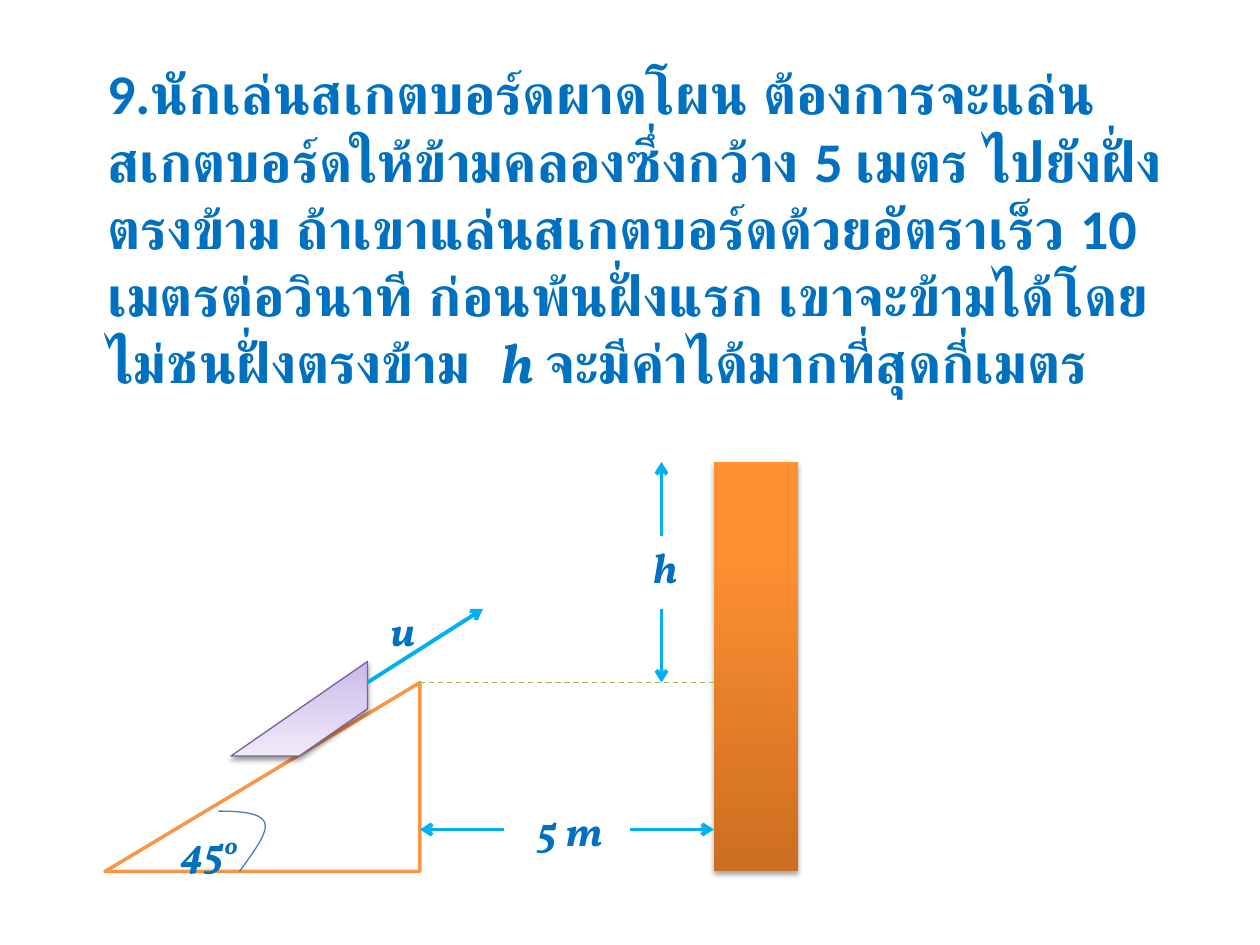
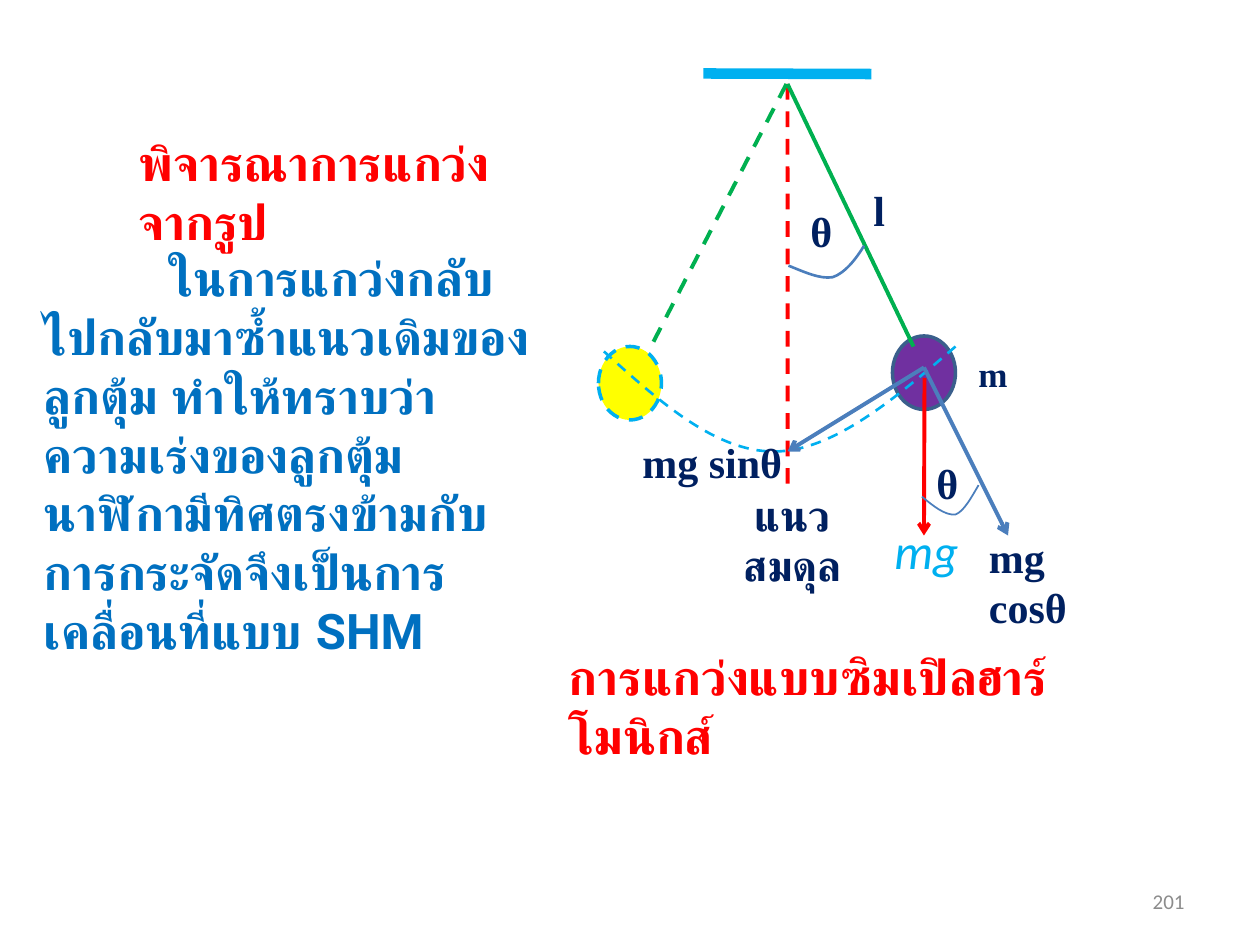
from lxml import etree
from pptx import Presentation
from pptx.dml.color import RGBColor
from pptx.enum.dml import MSO_LINE
from pptx.enum.shapes import MSO_CONNECTOR, MSO_SHAPE as SHAPE
from pptx.enum.text import MSO_ANCHOR as ANCHOR, MSO_AUTO_SIZE, PP_ALIGN as ALIGN
from pptx.oxml.ns import qn
from pptx.util import Emu, Inches, Pt

# Grid: 120 columns by 90 rows of a twelfth of an inch
CELL = Inches(1) / 12
COLUMNS, ROWS = 120, 90

WHITE = RGBColor(0xFF, 0xFF, 0xFF)
BLUE = RGBColor(0x00, 0x70, 0xC0)
SKY = RGBColor(0x00, 0xB0, 0xF0)
STEEL = RGBColor(0x4B, 0x7E, 0xBC)
BOB_EDGE = RGBColor(0x3A, 0x5F, 0x8C)
NAVY = RGBColor(0x00, 0x20, 0x60)
RED = RGBColor(0xFF, 0x00, 0x00)
GREEN = RGBColor(0x00, 0xB0, 0x50)
OLIVE = RGBColor(0x98, 0xB9, 0x55)
YELLOW = RGBColor(0xFF, 0xFF, 0x00)
PURPLE = RGBColor(0x70, 0x30, 0xA0)
VIOLET = RGBColor(0x7D, 0x60, 0xA0)
ORANGE = RGBColor(0xF7, 0x96, 0x46)
GREY = RGBColor(0x8C, 0x8C, 0x8C)
WALL_SHADES = [(0, RGBColor(0xCC, 0x6E, 0x20)), (80, RGBColor(0xFF, 0x90, 0x34)),
               (100, RGBColor(0xFF, 0x91, 0x36))]
BOARD_SHADES = [(0, RGBColor(0xC9, 0xB5, 0xE8)), (35, RGBColor(0xD8, 0xCB, 0xEE)),
                (100, RGBColor(0xF0, 0xEA, 0xF9))]

BODY, SYMBOL, FORMULA = "Calibri", "Vollkorn", "Times New Roman"


def cells(*values):
    return [Emu(round(value * CELL)) for value in values]


def add_tag(parent, tag, **attributes):
    element = etree.SubElement(parent, qn(tag))
    for key, value in attributes.items():
        element.set(key, str(value))
    return element


# Text
def add_run(paragraph, text, size, color, font=BODY, bold=True, italic=False, **extra):
    run = paragraph.add_run()
    run.text = text
    run.font.size, run.font.name = Pt(size), font
    run.font.bold, run.font.italic = bold, italic
    run.font.color.rgb = color
    for key, value in extra.items():
        run.font._element.set(key, str(value))


def prepare_frame(frame, wrap=True, align=ALIGN.LEFT, anchor=ANCHOR.TOP):
    frame.word_wrap = wrap
    frame.auto_size = MSO_AUTO_SIZE.NONE
    frame.vertical_anchor = anchor
    paragraph = frame.paragraphs[0]
    paragraph.alignment = align
    return paragraph


def add_text(slide, box, text, size, color, wrap=True, align=ALIGN.LEFT,
             anchor=ANCHOR.TOP, **style):
    frame = slide.shapes.add_textbox(*cells(*box)).text_frame
    paragraph = prepare_frame(frame, wrap, align, anchor)
    add_run(paragraph, text, size, color, **style)
    return paragraph


def add_symbol(slide, box, text):
    return add_text(slide, box, text, 24, BLUE, wrap=False, font=SYMBOL, italic=True)


def add_formula(slide, box, text, size=24, align=ALIGN.LEFT):
    add_text(slide, box, text, size, NAVY, align=align, font=FORMULA)


def place_title(slide, box):
    title = slide.shapes.title
    title.left, title.top, title.width, title.height = cells(*box)
    return prepare_frame(title.text_frame)


# Shapes and lines
def style_line(line, color, width, dashed=False):
    line.color.rgb = color
    line.width = Pt(width)
    if dashed:
        line.dash_style = MSO_LINE.DASH


def add_figure(slide, kind, box, fill=None, edge=None, width=2, dashed=False, rotation=0):
    figure = slide.shapes.add_shape(kind, *cells(*box))
    figure.shadow.inherit = False
    figure.rotation = rotation
    if fill is not None:
        figure.fill.solid()
        figure.fill.fore_color.rgb = fill
    if edge is None:
        figure.line.fill.background()
    else:
        style_line(figure.line, edge, width, dashed)
    return figure


def shade(figure, stops, opacity):
    """Give a figure a gradient running upwards and a soft shadow below."""
    figure.fill.gradient()
    figure.fill.gradient_angle = 90
    properties = figure._element.spPr
    stop_list = properties.find(qn("a:gradFill")).find(qn("a:gsLst"))
    for old_stop in list(stop_list):
        stop_list.remove(old_stop)
    for position, color in stops:
        stop = add_tag(stop_list, "a:gs", pos=position * 1000)
        add_tag(stop, "a:srgbClr", val=color)
    shadow = add_tag(properties.find(qn("a:effectLst")), "a:outerShdw", blurRad=Pt(3.1),
                     dist=Pt(1.8), dir=90 * 60000, rotWithShape=0)
    tint = add_tag(shadow, "a:srgbClr", val="000000")
    add_tag(tint, "a:alpha", val=opacity * 1000)


def add_line(slide, start, end, color, width=2.25, dashed=False, arrow=False):
    line = slide.shapes.add_connector(MSO_CONNECTOR.STRAIGHT, *cells(*start, *end))
    style_line(line.line, color, width, dashed)
    if arrow:
        add_tag(line.line._get_or_add_ln(), "a:tailEnd", type="arrow")
    add_tag(line._element.spPr, "a:effectLst")


def add_curve(slide, points, color, width, dashed=False):
    """Draw joined cubic curves: a start, then three points for each piece."""
    points = [cells(*point) for point in points]
    builder = slide.shapes.build_freeform(*points[0])
    builder.add_line_segments(points[3::3], close=False)
    curve = builder.convert_to_shape()
    curve.shadow.inherit = False
    curve.fill.background()
    style_line(curve.line, color, width, dashed)
    # Bend each straight piece with its two control points
    pieces = list(curve._element.iter(qn("a:lnTo")))
    for index, piece in enumerate(pieces):
        piece.tag = qn("a:cubicBezTo")
        for child in list(piece):
            piece.remove(child)
        for x, y in points[3 * index + 1:3 * index + 4]:
            add_tag(piece, "a:pt", x=x - curve.left, y=y - curve.top)


# Slide: skateboard jump over a canal
def build_jump(slide):
    question = place_title(slide, (9, 5, 104, 27))
    add_run(question, "9.นักเล่นสเกตบอร์ดผาดโผน ต้องการจะแล่นสเกตบอร์ดให้ข้ามคลองซึ่งกว้าง "
            "5 เมตร ไปยังฝั่งตรงข้าม ถ้าเขาแล่นสเกตบอร์ดด้วยอัตราเร็ว 10 เมตรต่อวินาที "
            "ก่อนพ้นฝั่งแรก เขาจะข้ามได้โดยไม่ชนฝั่งตรงข้าม", 32, BLUE)
    add_run(question, " ", 32, BLUE, spc=900)
    add_run(question, "h ", 32, BLUE, font=SYMBOL, italic=True)
    add_run(question, "จะมีค่าได้มากที่สุดกี่เมตร", 32, BLUE)

    # Far bank, ramp and board
    far_bank = add_figure(slide, SHAPE.RECTANGLE, (68, 44, 8, 39))
    shade(far_bank, WALL_SHADES, 35)
    add_figure(slide, SHAPE.RIGHT_TRIANGLE, (16, 59, 18, 30), WHITE, ORANGE, rotation=270)
    angle = add_symbol(slide, (16, 78, 8, 6), "45")
    add_run(angle, "o", 24, BLUE, font=SYMBOL, italic=True, baseline=30000)
    add_curve(slide, [(20.8, 77.25), (22.8, 77.25), (24.8, 77.4), (25.2, 78.3),
                      (25.6, 79.3), (24.1, 81.2), (22.8, 83)], STEEL, 0.75)
    board = add_figure(slide, SHAPE.DIAGONAL_STRIPE, (22, 63, 13, 9), edge=VIOLET,
                       width=0.75, rotation=180)
    shade(board, BOARD_SHADES, 38)

    # Width, height and velocity arrows
    for start, end in [((48, 79), (40, 79)), ((60, 79), (68, 79)), ((63, 58), (63, 65)),
                       ((63, 51), (63, 44)), ((35, 65), (46, 58))]:
        add_line(slide, start, end, SKY, arrow=True)
    for box, text in [((36, 57, 5, 6), "u"), ((50, 76, 9, 6), "5 m"), ((61, 51, 5, 6), "h")]:
        add_symbol(slide, box, text)
    add_line(slide, (40, 65), (68, 65), OLIVE, 0.75, dashed=True)


# Slide: forces on a pendulum
def build_pendulum(slide):
    pivot, mass = (75, 8), (88, 35)
    add_text(slide, (86, 83.4, 28, 4.8), "201", 12, GREY, align=ALIGN.RIGHT,
             anchor=ANCHOR.MIDDLE, bold=False)

    # Ceiling, bobs and strings
    add_figure(slide, SHAPE.OVAL, (57, 33, 6, 7), YELLOW, SKY, dashed=True)
    heading = place_title(slide, (12, 12, 41, 7))
    add_run(heading, "พิจารณาการแกว่ง จากรูป", 28, RED, font="Arial")
    add_line(slide, (67, 7), (83, 7.05), SKY, 6)
    add_line(slide, pivot, (75.02, 47), RED, dashed=True)
    add_figure(slide, SHAPE.OVAL, (85, 32, 6, 7), PURPLE, BOB_EDGE)
    add_formula(slide, (82, 17, 7, 6), "l")
    add_formula(slide, (92, 33, 10, 5), "m", 20)
    add_line(slide, pivot, (87, 33), GREEN)
    add_curve(slide, [(91, 33), (85.2, 38), (79.3, 43), (73.7, 43),
                      (68, 43), (62.5, 38), (57, 33)], SKY, 1.5, dashed=True)
    add_formula(slide, (67, 46, 17, 6), "แนวสมดุล", align=ALIGN.CENTER)
    add_line(slide, (74.9, 8), (62, 33), GREEN, dashed=True)

    # Caption and explanation
    add_text(slide, (53, 61, 48, 7), "การแกว่งแบบซิมเปิลฮาร์โมนิกส์", 28, RED, font="Arial")
    add_line(slide, (88.05, 36), (88, 51), RED, arrow=True)
    add_text(slide, (84, 49, 9, 7), "mg", 28, SKY, bold=False, italic=True)
    explanation = add_text(
        slide, (3, 23, 50, 29.5), "ในการแกว่งกลับไปกลับมาซ้ำแนวเดิมของลูกตุ้ม ทำให้ทราบว่า "
        "ความเร่งของลูกตุ้มนาฬิกามีทิศตรงข้ามกับการกระจัดจึงเป็นการเคลื่อนที่แบบ SHM",
        28, BLUE, font="Roboto")
    explanation._p.get_or_add_pPr().set("indent", str(Inches(1)))

    # Components of the weight and the angles
    add_curve(slide, [(75.1, 25.3), (76.6, 25.9), (78.1, 26.6), (79.3, 26.4),
                      (80.5, 26), (81.5, 24.7), (82.3, 23.4)], STEEL, 1.5)
    for box, text in [((76, 19, 7, 6), "θ"), ((88, 43, 7, 6), "θ"),
                      ((60, 41, 18, 6), "mg sinθ"), ((93, 50, 16, 6), "mg cosθ")]:
        add_formula(slide, box, text)
    for tip in [(96, 51), (75, 43)]:
        add_line(slide, mass, tip, STEEL, arrow=True)
    add_curve(slide, [(87.8, 47.3), (88.9, 48.2), (90, 49.1), (91, 49),
                      (91.8, 48.7), (92.5, 47.4), (93.2, 46.2)], STEEL, 1)


def main():
    deck = Presentation()
    deck.slide_width, deck.slide_height = cells(COLUMNS, ROWS)
    title_only = deck.slide_layouts[5]
    for build in (build_jump, build_pendulum):
        build(deck.slides.add_slide(title_only))
    deck.save("out.pptx")


if __name__ == "__main__":
    main()
